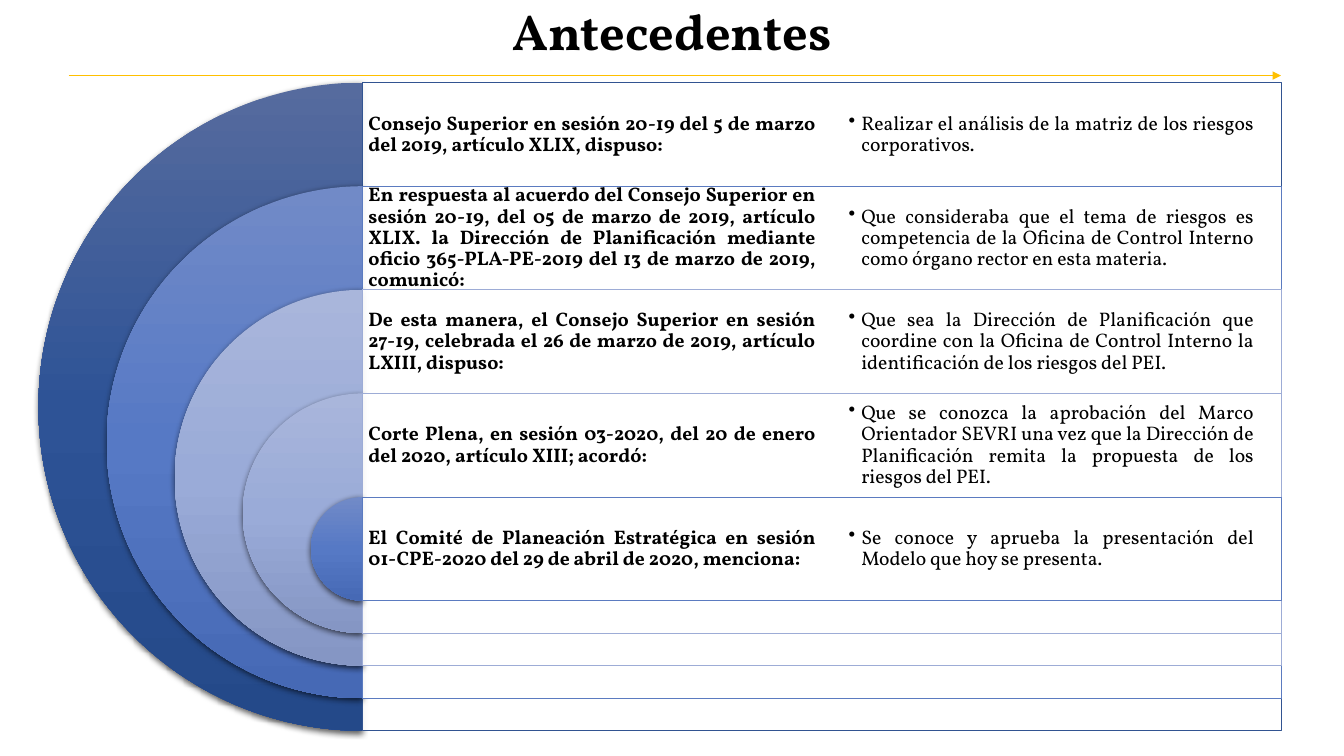
from copy import deepcopy

from lxml.etree import SubElement
from pptx import Presentation
from pptx.dml.color import RGBColor
from pptx.enum.shapes import MSO_CONNECTOR, MSO_SHAPE
from pptx.enum.text import MSO_ANCHOR, PP_ALIGN
from pptx.oxml.ns import qn
from pptx.util import Pt

BLACK = RGBColor(0x00, 0x00, 0x00)
WHITE = RGBColor(0xFF, 0xFF, 0xFF)
GOLD = RGBColor(0xFF, 0xC0, 0x00)
# Each palette: gradient from top to bottom, then the frame line
NAVY = (RGBColor(0x56, 0x6B, 0x9E), RGBColor(0x2E, 0x53, 0x96),
        RGBColor(0x24, 0x49, 0x89), RGBColor(0x32, 0x54, 0x91))
BLUE = (RGBColor(0x71, 0x8A, 0xC7), RGBColor(0x56, 0x79, 0xC5),
        RGBColor(0x46, 0x69, 0xB5), RGBColor(0x5B, 0x7B, 0xC0))
PALE = (RGBColor(0xA9, 0xB6, 0xDB), RGBColor(0x9A, 0xAB, 0xD8),
        RGBColor(0x85, 0x96, 0xC4), RGBColor(0x9D, 0xAC, 0xD6))
FONT = "Vollkorn"

TITLE = "Antecedentes"
BACKGROUND = [
    (NAVY, "Consejo Superior en sesión 20-19 del 5 de marzo del 2019, artículo XLIX, dispuso:",
     "Realizar el análisis de la matriz de los riesgos corporativos."),
    (BLUE, "En respuesta al acuerdo del Consejo Superior en sesión 20-19, del 05 de marzo de 2019, "
     "artículo XLIX. la Dirección de Planificación mediante oficio 365-PLA-PE-2019 del 13 de "
     "marzo de 2019, comunicó:",
     "Que consideraba que el tema de riesgos es competencia de la Oficina de Control Interno "
     "como órgano rector en esta materia."),
    (PALE, "De esta manera, el Consejo Superior en sesión 27-19, celebrada el 26 de marzo de 2019, "
     "artículo LXIII, dispuso:",
     "Que sea la Dirección de Planificación que coordine con la Oficina de Control Interno "
     "la identificación de los riesgos del PEI."),
    (PALE, "Corte Plena, en sesión 03-2020, del 20 de enero del 2020, artículo XIII; acordó:",
     "Que se conozca la aprobación del Marco Orientador SEVRI una vez que la Dirección de "
     "Planificación remita la propuesta de los riesgos del PEI."),
    (BLUE, "El Comité de Planeación Estratégica en sesión 01-CPE-2020 del 29 de abril de 2020, "
     "menciona:",
     "Se conoce y aprueba la presentación del Modelo que hoy se presenta."),
]

CENTER_X, TOP = 259, 59
ROW_HEIGHT = 74
OUTER_DIAMETER = 463
DIAMETER_STEP = (OUTER_DIAMETER - ROW_HEIGHT) / (len(BACKGROUND) - 1)
FRAME_WIDTH = 656
COLUMN_WIDTH = FRAME_WIDTH / 2


def points(*lengths):
    return [Pt(length) for length in lengths]


def style(target, **values):
    for name, value in values.items():
        setattr(target, name, value)


def add_half_disc(slide, top, diameter, gradient):
    disc = slide.shapes.add_shape(
        MSO_SHAPE.PIE, *points(CENTER_X - diameter / 2, top, diameter, diameter))
    disc.adjustments[0], disc.adjustments[1] = 54, 162
    disc.line.fill.background()
    disc.fill.gradient()
    disc.fill.gradient_angle = 270
    stops = disc.fill._xPr.find(".//" + qn("a:gsLst"))
    stops.append(deepcopy(stops[-1]))
    for stop, position, color in zip(disc.fill.gradient_stops, (0, 0.5, 1), gradient):
        stop.position = position
        stop.color.rgb = color
    disc.shadow.inherit = False
    effects = disc._element.spPr.find(qn("a:effectLst"))
    shadow = SubElement(effects, qn("a:outerShdw"), blurRad=str(Pt(4.5)), dist=str(Pt(1.5)),
                        dir="5400000", algn="ctr", rotWithShape="0")
    black = SubElement(shadow, qn("a:srgbClr"), val=str(BLACK))
    SubElement(black, qn("a:alpha"), val="63000")


def add_frame(slide, top, height, line_color):
    frame = slide.shapes.add_shape(
        MSO_SHAPE.RECTANGLE, *points(CENTER_X, top, FRAME_WIDTH, height))
    frame.shadow.inherit = False
    frame.fill.solid()
    frame.fill.fore_color.rgb = WHITE
    white = frame._element.spPr.find(qn("a:solidFill"))[0]
    SubElement(white, qn("a:alpha"), val="90000")
    frame.line.color.rgb = line_color
    frame.line.width = Pt(0.5)


def add_cell(slide, column, top, text, inset, space_after, bold):
    cell = slide.shapes.add_textbox(
        *points(CENTER_X + column * COLUMN_WIDTH, top, COLUMN_WIDTH, ROW_HEIGHT))
    margin = Pt(inset)
    style(cell.text_frame, word_wrap=True, vertical_anchor=MSO_ANCHOR.MIDDLE,
          margin_left=margin, margin_right=margin, margin_top=margin, margin_bottom=margin)
    paragraph = cell.text_frame.paragraphs[0]
    style(paragraph, text=text, alignment=PP_ALIGN.JUSTIFY, line_spacing=0.9,
          space_after=Pt(space_after))
    style(paragraph.runs[0].font, name=FONT, size=Pt(14), bold=bold)
    paragraph.runs[0].font.color.rgb = BLACK
    return paragraph


def add_bullet(paragraph):
    paragraph.level = 1
    properties = paragraph._p.get_or_add_pPr()
    properties.set("marL", str(Pt(9)))
    properties.set("indent", str(Pt(-9)))
    SubElement(properties, qn("a:buChar"), char="•")


def add_title(slide):
    title = slide.shapes.title
    left, top, width, height = points(66, 0, 828, 49)
    style(title, left=left, top=top, width=width, height=height)
    title.text_frame.vertical_anchor = MSO_ANCHOR.MIDDLE
    paragraph = title.text_frame.paragraphs[0]
    style(paragraph, text=TITLE, alignment=PP_ALIGN.CENTER, line_spacing=0.9)
    style(paragraph.runs[0].font, name=FONT, size=Pt(36), bold=True)
    paragraph.runs[0].font.color.rgb = BLACK


def add_title_arrow(slide):
    arrow = slide.shapes.add_connector(
        MSO_CONNECTOR.STRAIGHT, *points(49, 54, CENTER_X + FRAME_WIDTH, 54))
    arrow.line.color.rgb = GOLD
    arrow.line.width = Pt(1)
    SubElement(arrow.line._get_or_add_ln(), qn("a:tailEnd"), type="triangle")
    SubElement(arrow._element.spPr, qn("a:effectLst"))


def main():
    deck = Presentation()
    deck.slide_width, deck.slide_height = points(960, 540)
    slide = deck.slides.add_slide(deck.slide_layouts[5])
    add_title(slide)
    add_title_arrow(slide)
    for row, (palette, source, decision) in enumerate(BACKGROUND):
        *gradient, line_color = palette
        top = TOP + row * ROW_HEIGHT
        diameter = OUTER_DIAMETER - row * DIAMETER_STEP
        add_half_disc(slide, top, diameter, gradient)
        add_frame(slide, top, diameter, line_color)
        add_cell(slide, 0, top, source, inset=4.2, space_after=4.9, bold=True)
        add_bullet(add_cell(slide, 1, top, decision, inset=19.2, space_after=2.1, bold=False))
    deck.save("out.pptx")


if __name__ == "__main__":
    main()
